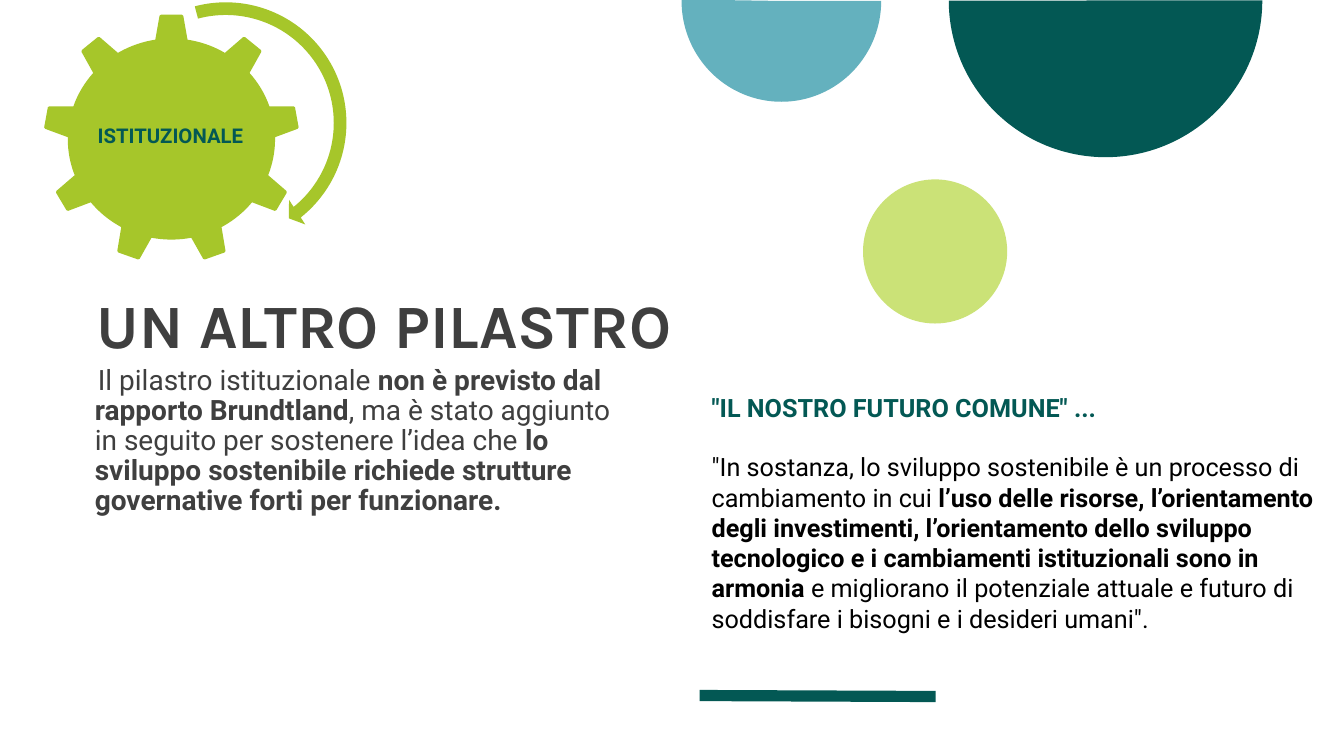
import pptx
import pptx.util
import pptx.dml.color
import pptx.enum.shapes
import pptx.enum.text
import lxml.etree
from pptx.util import Inches

COLORS = {
    "teal": "035854",
    "blue": "64B1BE",
    "pale_green": "CBE277",
    "lime": "A6C62A",
    "gray": "3F3F3F",
    "black": "000000",
}
SHAPES = pptx.enum.shapes.MSO_SHAPE


def rgb(name):
    return pptx.dml.color.RGBColor.from_string(COLORS[name])


def add_filled(slide, kind, left, top, width, height, color, adjustments=()):
    shape = slide.shapes.add_shape(
        kind, Inches(left), Inches(top), Inches(width), Inches(height))
    for index, value in enumerate(adjustments):
        shape.adjustments[index] = value
    shape.shadow.inherit = False
    shape.fill.solid()
    shape.fill.fore_color.rgb = rgb(color)
    shape.line.fill.background()
    return shape


def add_text_frame(slide, left, top, width, height, margins=(0, 0, 0, 0)):
    box = slide.shapes.add_textbox(
        Inches(left), Inches(top), Inches(width), Inches(height))
    frame = box.text_frame
    frame.word_wrap = True
    (frame.margin_left, frame.margin_top,
     frame.margin_right, frame.margin_bottom) = map(Inches, margins)
    return frame


def write(paragraph, pieces, size, color, font="Roboto"):
    """Write (text, bold) pieces into one paragraph."""
    paragraph.font.size = pptx.util.Pt(size)
    paragraph.font.name = font
    paragraph.font.color.rgb = rgb(color)
    for text, bold in pieces:
        run = paragraph.add_run()
        run.text = text
        run.font.bold = bold


def add_decoration(slide, left, top):
    # Half circles hanging from the top edge, and a full circle below
    add_filled(slide, SHAPES.PIE, left + 2.65, top - 1.55, 3.11, 3.11,
               "teal", (0, 107.956))
    add_filled(slide, SHAPES.PIE, left, top - 0.99, 1.98, 2,
               "blue", (0, 108.518))
    add_filled(slide, SHAPES.OVAL, left + 1.8, top + 1.78, 1.43, 1.43, "pale_green")


def add_accent_line(slide, left, top, width):
    line = slide.shapes.add_connector(
        pptx.enum.shapes.MSO_CONNECTOR.STRAIGHT,
        Inches(left), Inches(top), Inches(left + width), Inches(top + 0.01))
    line.line.color.rgb = rgb("teal")
    line.line.width = pptx.util.Pt(8)
    lxml.etree.SubElement(
        line.element.spPr, pptx.oxml.ns.qn("a:effectLst"))


def add_gear(slide, left, top, label):
    gear = add_filled(slide, SHAPES.GEAR_9, left, top, 2.52, 2.46, "lime")
    gear.line.color.rgb = rgb("lime")
    gear.line.width = pptx.util.Pt(2)

    # Gear label
    frame = add_text_frame(slide, left + 0.5, top + 0.57, 1.52, 1.27,
                           (0, 0.02, 0.02, 0.02))
    frame.vertical_anchor = pptx.enum.text.MSO_ANCHOR.MIDDLE
    paragraph = frame.paragraphs[0]
    paragraph.alignment = pptx.enum.text.PP_ALIGN.CENTER
    paragraph.line_spacing = 0.9
    write(paragraph, [(label, True)], 14.5, "teal")

    # Rotation arrow
    add_filled(slide, SHAPES.CIRCULAR_ARROW, left + 0.52, top - 0.21, 2.56, 2.56,
               "lime", (0.049, 3.126, 30.811, 153.072, 0.057))


def add_pillar_text(slide, left, top):
    # Title
    frame = add_text_frame(slide, left + 0.52, top, 6.42, 0.73)
    frame.vertical_anchor = pptx.enum.text.MSO_ANCHOR.BOTTOM
    title = frame.paragraphs[0]
    title.line_spacing = 0.8
    write(title, [("UN ALTRO PILASTRO", True)], 44, "gray", "Karla")

    # Body, first line slightly indented
    frame = add_text_frame(slide, left, top + 0.73, 5.68, 3.55, (0, 0.05, 0, 0))
    body = frame.paragraphs[0]
    properties = body._p.get_or_add_pPr()
    properties.set("marL", str(Inches(0.5)))
    properties.set("indent", str(Inches(0.03)))
    body.line_spacing = 0.9
    write(body, [
        ("Il pilastro istituzionale ", False),
        ("non è previsto dal rapporto Brundtland", True),
        (", ma è stato aggiunto in seguito per sostenere l’idea che ", False),
        ("lo sviluppo sostenibile richiede strutture governative forti "
         "per funzionare.", True),
    ], 20, "gray")


def add_quote(slide, left, top, width, height):
    frame = add_text_frame(slide, left, top, width, height, (0.1, 0.05, 0.1, 0.05))
    write(frame.paragraphs[0], [('"IL NOSTRO FUTURO COMUNE" ...', True)], 18, "teal")
    quote = frame.add_paragraph()
    quote.space_before = pptx.util.Pt(21)
    write(quote, [
        ('"In sostanza, lo sviluppo sostenibile è un processo di '
         'cambiamento in cui ', False),
        ("l’uso delle risorse, l’orientamento degli investimenti, "
         "l’orientamento dello sviluppo tecnologico e i cambiamenti "
         "istituzionali sono in armonia ", True),
        ("e migliorano il potenziale attuale e futuro di soddisfare "
         'i bisogni e i desideri umani".', False),
    ], 18, "black")


def main():
    presentation = pptx.Presentation()
    presentation.slide_width = Inches(13.33)
    presentation.slide_height = Inches(7.5)
    slide = presentation.slides.add_slide(presentation.slide_layouts[6])
    add_accent_line(slide, 6.94, 6.9, 2.34)
    add_decoration(slide, 6.76, 0)
    add_pillar_text(slide, 0.44, 2.85)
    add_quote(slide, 6.96, 3.84, 6.37, 2.52)
    add_gear(slide, 0.44, 0.15, "ISTITUZIONALE")
    presentation.save("out.pptx")


if __name__ == "__main__":
    main()
